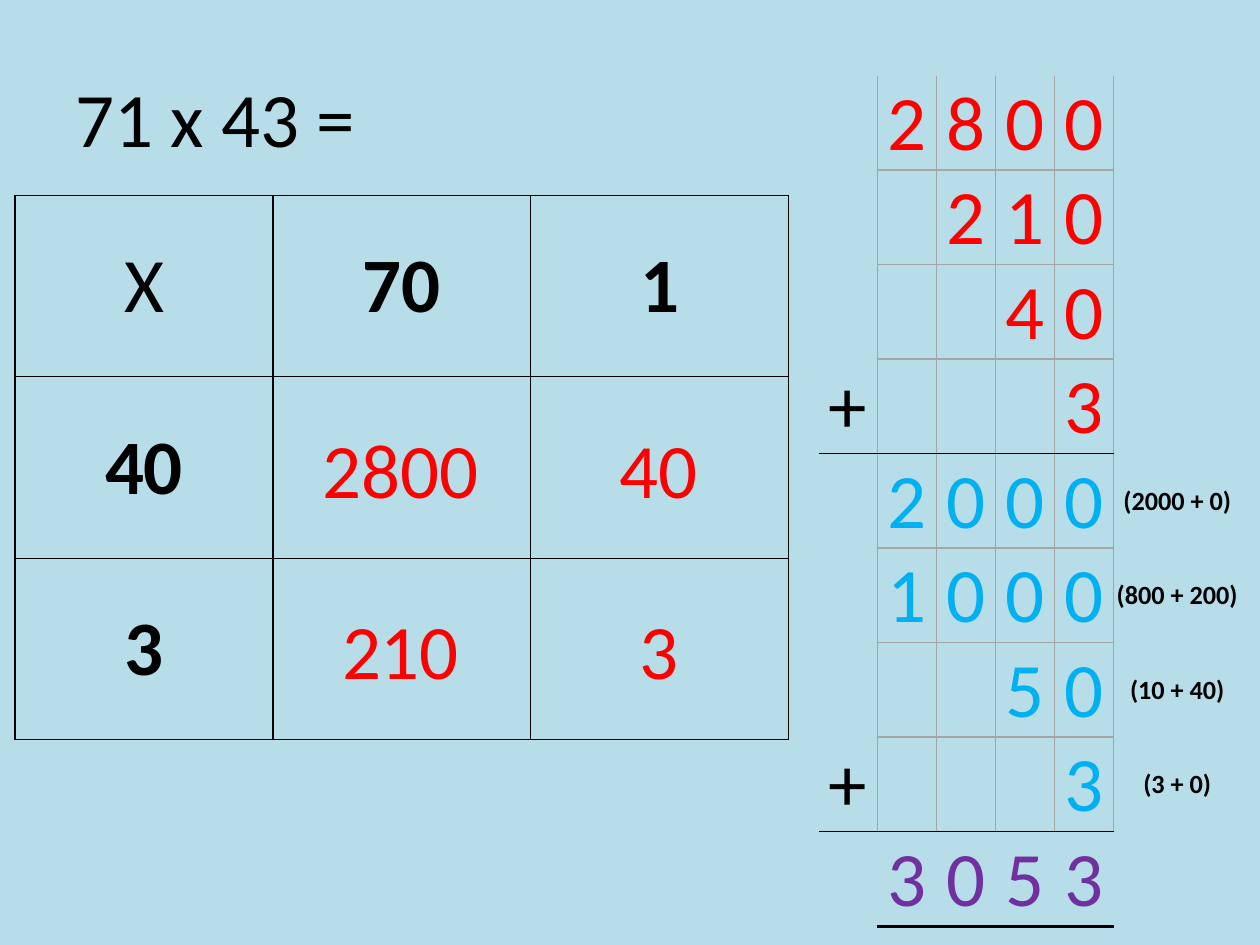
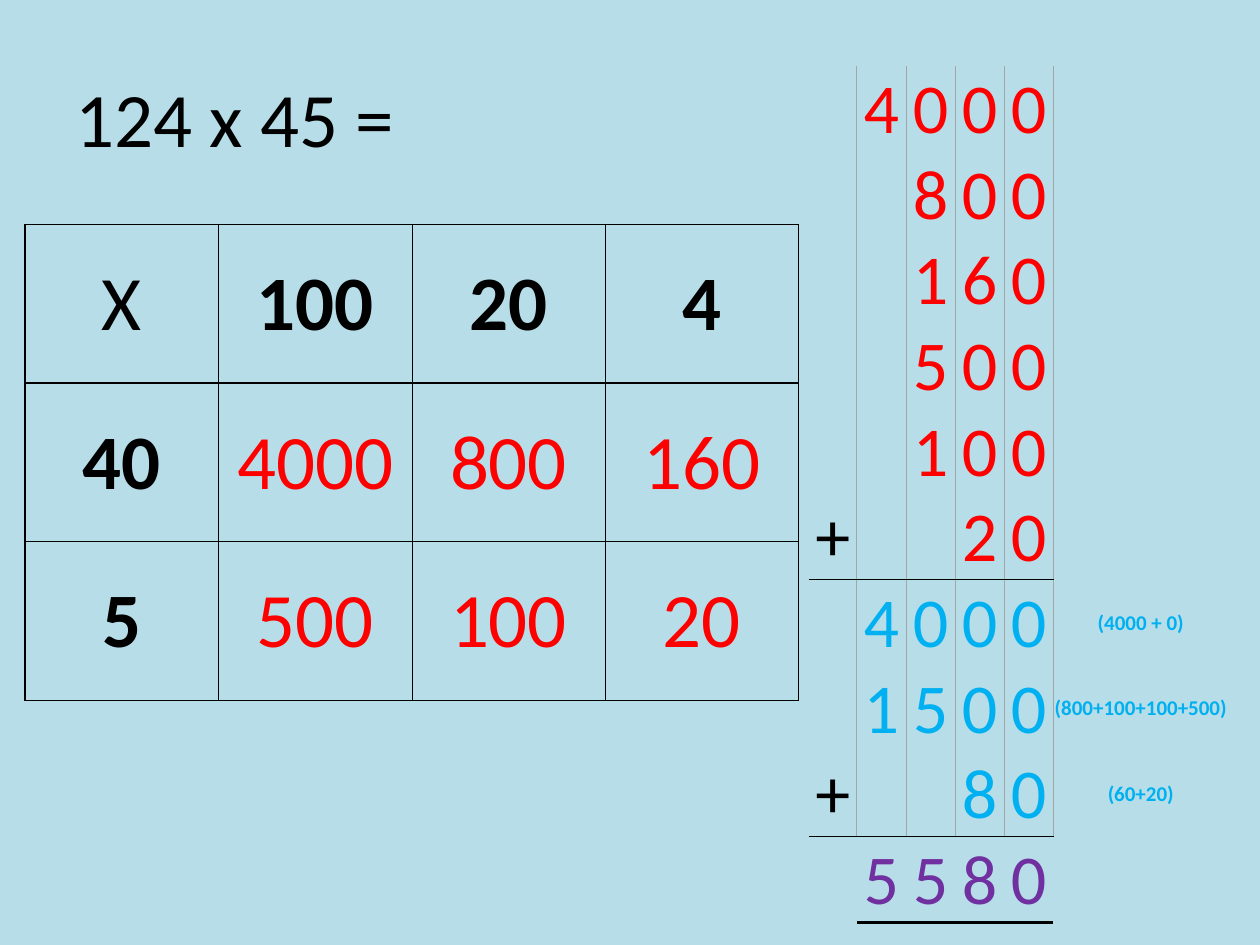
from lxml.etree import SubElement
from pptx import Presentation
from pptx.dml.color import RGBColor
from pptx.enum.shapes import MSO_SHAPE
from pptx.enum.text import MSO_ANCHOR, PP_ALIGN
from pptx.oxml.ns import qn
from pptx.util import Inches, Pt

BACKGROUND = RGBColor(0xB7, 0xDE, 0xE8)
BLACK = RGBColor(0, 0, 0)
RED = RGBColor(0xFF, 0, 0)
BLUE = RGBColor(0, 0xB0, 0xF0)
PURPLE = RGBColor(0x70, 0x30, 0xA0)
GREY = RGBColor(0xA5, 0xA5, 0xA5)
FONT = "Calibri"
GRID_W = 6.14
DIGITS = 4

SLIDES = [
    dict(title="71 x 43 =", grid_at=(0.12, 1.55), row_h=1.44, tiles=True,
         grid=[["X", "70", "1"], ["40", "2800", "40"], ["3", "210", "3"]],
         sum_at=(6.5, 0.6), sum_row_h=0.75, sum_cols=(0.46, 0.47, 1.01),
         size=44, row_lines=True, note_size=15, note_color=BLACK,
         addends=["2800", "210", "40", "3"],
         partials=[("2000", "(2000 + 0)"), ("1000", "(800 + 200)"),
                   ("50", "(10 + 40)"), ("3", "(3 + 0)")],
         total="3053"),
    dict(title="124 x 45 =", grid_at=(0.2, 1.78), row_h=1.26, tiles=False,
         grid=[["X", "100", "20", "4"], ["40", "4000", "800", "160"],
               ["5", "500", "100", "20"]],
         sum_at=(6.42, 0.52), sum_row_h=0.68, sum_cols=(0.38, 0.39, 1.39),
         size=40, row_lines=False, note_size=12, note_color=BLUE,
         addends=["4000", "800", "160", "500", "100", "20"],
         partials=[("4000", "(4000 + 0)"), ("1500", "(800+100+100+500)"),
                   ("80", "(60+20)")],
         total="5580"),
]


def write(tf, text, size, color, bold=False, align=PP_ALIGN.CENTER):
    tf.text = text
    p = tf.paragraphs[0]
    p.alignment = align
    for r in p.runs:
        r.font.name = FONT
        r.font.size = Pt(size)
        r.font.bold = bold
        r.font.color.rgb = color


def set_cell(cell, text, size, color, bold, edges):
    """Fill one cell; edges are (colour, points) or None for left, right, top, bottom."""
    cell.margin_left = cell.margin_right = cell.margin_top = Inches(0.01)
    cell.margin_bottom = 0
    cell.vertical_anchor = MSO_ANCHOR.MIDDLE
    if text:
        write(cell.text_frame, text, size, color, bold)
    tcPr = cell._tc.get_or_add_tcPr()
    for side, edge in zip("LRTB", edges):
        ln = SubElement(tcPr, qn(f"a:ln{side}"))
        if edge:
            ln.set("w", str(Pt(edge[1])))
            fill = SubElement(ln, qn("a:solidFill"))
            SubElement(fill, qn("a:srgbClr")).set("val", str(edge[0]))
        else:
            SubElement(ln, qn("a:noFill"))
    cell.fill.background()


prs = Presentation()
prs.slide_width, prs.slide_height = Inches(10), Inches(7.5)

for d in SLIDES:
    s = prs.slides.add_slide(prs.slide_layouts[6])
    s.background.fill.solid()
    s.background.fill.fore_color.rgb = BACKGROUND

    tf = s.shapes.add_textbox(Inches(0.5), Inches(0.3), Inches(9), Inches(1.25)).text_frame
    tf.word_wrap = True
    tf.vertical_anchor = MSO_ANCHOR.MIDDLE
    write(tf, d["title"], 44, BLACK, align=PP_ALIGN.LEFT)

    # Multiplication grid
    left, top = d["grid_at"]
    rows, cols = len(d["grid"]), len(d["grid"][0])
    col_w, row_h = GRID_W / cols, d["row_h"]
    table = s.shapes.add_table(rows, cols, Inches(left), Inches(top),
                               Inches(GRID_W), Inches(rows * row_h)).table
    table.first_row = table.horz_banding = False
    x_lines = [(BLACK, 1 if x in (0, 1, cols) else 0.5) for x in range(cols + 1)]
    y_lines = [(BLACK, 1 if y in (0, 1, rows) else 0.5) for y in range(rows + 1)]
    for y, line in enumerate(d["grid"]):
        for x, text in enumerate(line):
            product = x > 0 and y > 0
            on_tile = product and d["tiles"]
            set_cell(table.cell(y, x), "" if on_tile else text, 44,
                     RED if product else BLACK, not product and x + y > 0,
                     x_lines[x:x + 2] + y_lines[y:y + 2])
            if on_tile:
                tile = s.shapes.add_shape(
                    MSO_SHAPE.RECTANGLE,
                    Inches(left + x * col_w + 0.07), Inches(top + y * row_h + 0.05),
                    Inches(col_w - 0.16), Inches(row_h - 0.1))
                tile.shadow.inherit = False
                tile.fill.solid()
                tile.fill.fore_color.rgb = BACKGROUND
                tile.line.fill.background()
                tile.text_frame.vertical_anchor = MSO_ANCHOR.MIDDLE
                write(tile.text_frame, text, 44, RED)

    # Column addition: plus sign, digits, note
    entries = [(n, "", RED) for n in d["addends"]]
    entries += [(n, note, BLUE) for n, note in d["partials"]]
    entries.append((d["total"], "", PURPLE))
    rows, cols = len(entries), DIGITS + 2
    sum_lines = (len(d["addends"]), rows - 1)
    plus_w, digit_w, note_w = d["sum_cols"]
    widths = [plus_w] + [digit_w] * DIGITS + [note_w]
    left, top = d["sum_at"]
    table = s.shapes.add_table(rows, cols, Inches(left), Inches(top), Inches(sum(widths)),
                               Inches(rows * d["sum_row_h"])).table
    table.first_row = table.horz_banding = False
    for column, width in zip(table.columns, widths):
        column.width = Inches(width)

    for y, (number, note, color) in enumerate(entries):
        plus = "+" if y + 1 in sum_lines else ""
        texts = [plus, *number.rjust(DIGITS), note]
        for x, text in enumerate(texts):
            is_digit = 1 <= x <= DIGITS
            edges = [(GREY, 0.5) if 1 <= e <= DIGITS + 1 and y < rows - 1 else None
                     for e in (x, x + 1)]
            for e in (y, y + 1):
                if e in sum_lines and x <= DIGITS:
                    edges.append((BLACK, 1))
                elif e == rows and is_digit:
                    edges.append((BLACK, 2))
                elif 0 < e < rows and is_digit and d["row_lines"]:
                    edges.append((GREY, 1))
                else:
                    edges.append(None)
            is_note = x > DIGITS
            text_color = color if is_digit else d["note_color"] if is_note else BLACK
            set_cell(table.cell(y, x), text.strip(), d["note_size"] if is_note else d["size"],
                     text_color, is_note, edges)

prs.save("out.pptx")
